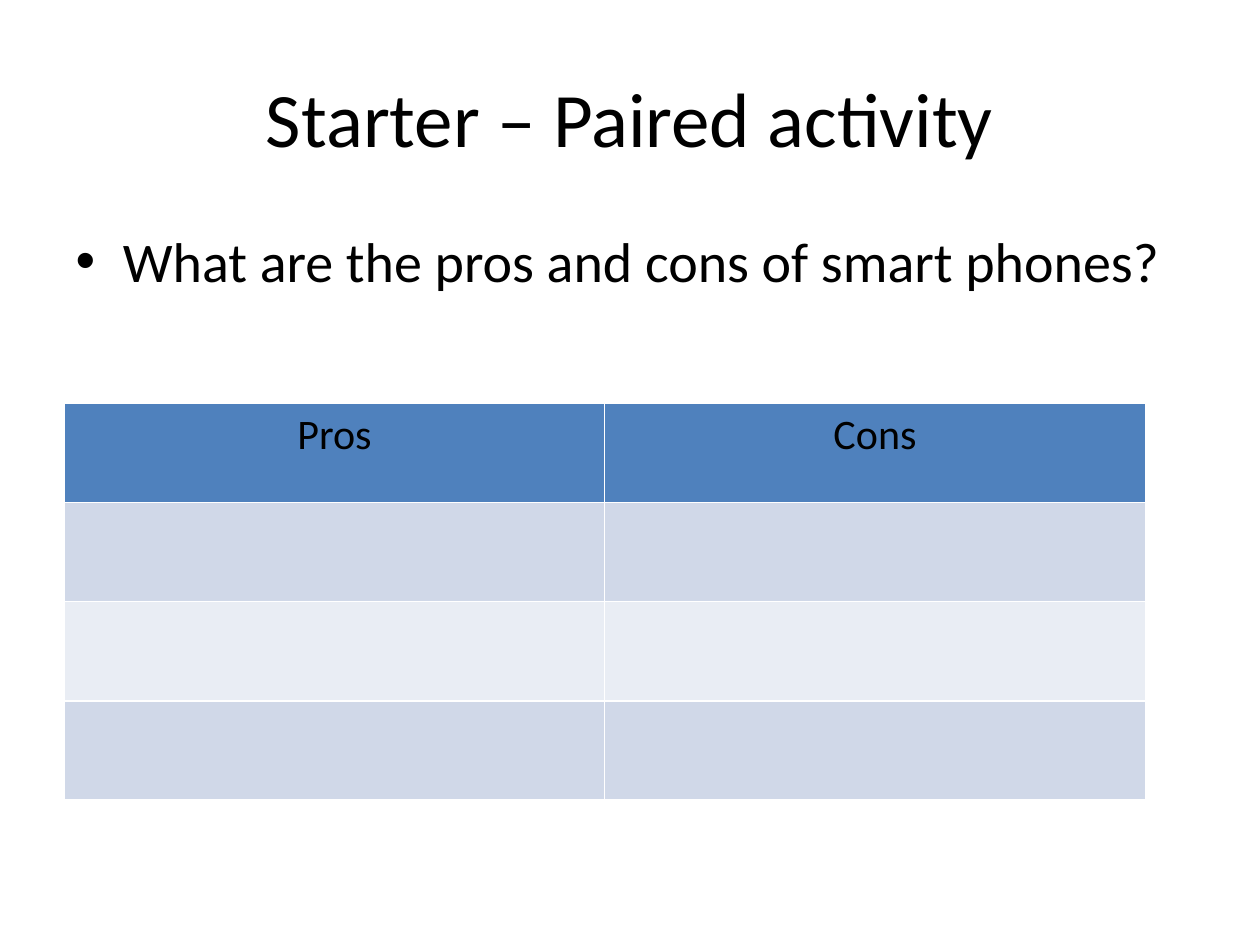
from pptx import Presentation
from pptx import util as u
from pptx.dml.color import RGBColor
from pptx.enum import text

FONT = "Calibri"
BLACK = "000000"
HEADER_FILL = "4F81BD"
BAND_FILLS = ["D0D8E8", "E9EDF4"]


def rgb(value):
    """Turn a hex string into a colour."""
    return RGBColor.from_string(value)


def place(sp, left, top, width, height):
    """Move and size a shape, in inches."""
    sp.left, sp.top = u.Inches(left), u.Inches(top)
    sp.width, sp.height = u.Inches(width), u.Inches(height)


def write(tf, content, size, align=None):
    """Set one formatted paragraph in a text frame."""
    tf.text = content
    p = tf.paragraphs[0]
    p.alignment = align
    for r in p.runs:
        r.font.name = FONT
        r.font.size = u.Pt(size)
        r.font.bold = False
        r.font.color.rgb = rgb(BLACK)


def add_answer_table(s, headings, blank_rows):
    """Add a table with headings above banded blank rows."""
    frame = s.shapes.add_table(blank_rows + 1, len(headings), u.Inches(0.51),
                               u.Inches(3.2), u.Inches(8.58), u.Inches(3.15))
    table = frame.table
    fills = [HEADER_FILL] + [BAND_FILLS[i % 2] for i in range(blank_rows)]
    for row, fill in zip(table.rows, fills):
        for cell in row.cells:
            cell.fill.solid()
            cell.fill.fore_color.rgb = rgb(fill)
    for cell, heading in zip(table.rows[0].cells, headings):
        write(cell.text_frame, heading, 24, text.PP_ALIGN.CENTER)


def main():
    """Build the starter activity slide."""
    prs = Presentation()
    prs.slide_width, prs.slide_height = u.Inches(10), u.Inches(7.5)
    s = prs.slides.add_slide(prs.slide_layouts[1])
    title, body = s.shapes.title, s.placeholders[1]
    place(title, 0.5, 0.3, 9, 1.25)
    write(title.text_frame, "Starter – Paired activity", 44, text.PP_ALIGN.CENTER)
    place(body, 0.5, 1.75, 9, 4.95)
    write(body.text_frame, "What are the pros and cons of smart phones?", 32)
    add_answer_table(s, ["Pros", "Cons"], 3)
    prs.save("out.pptx")


if __name__ == "__main__":
    main()
